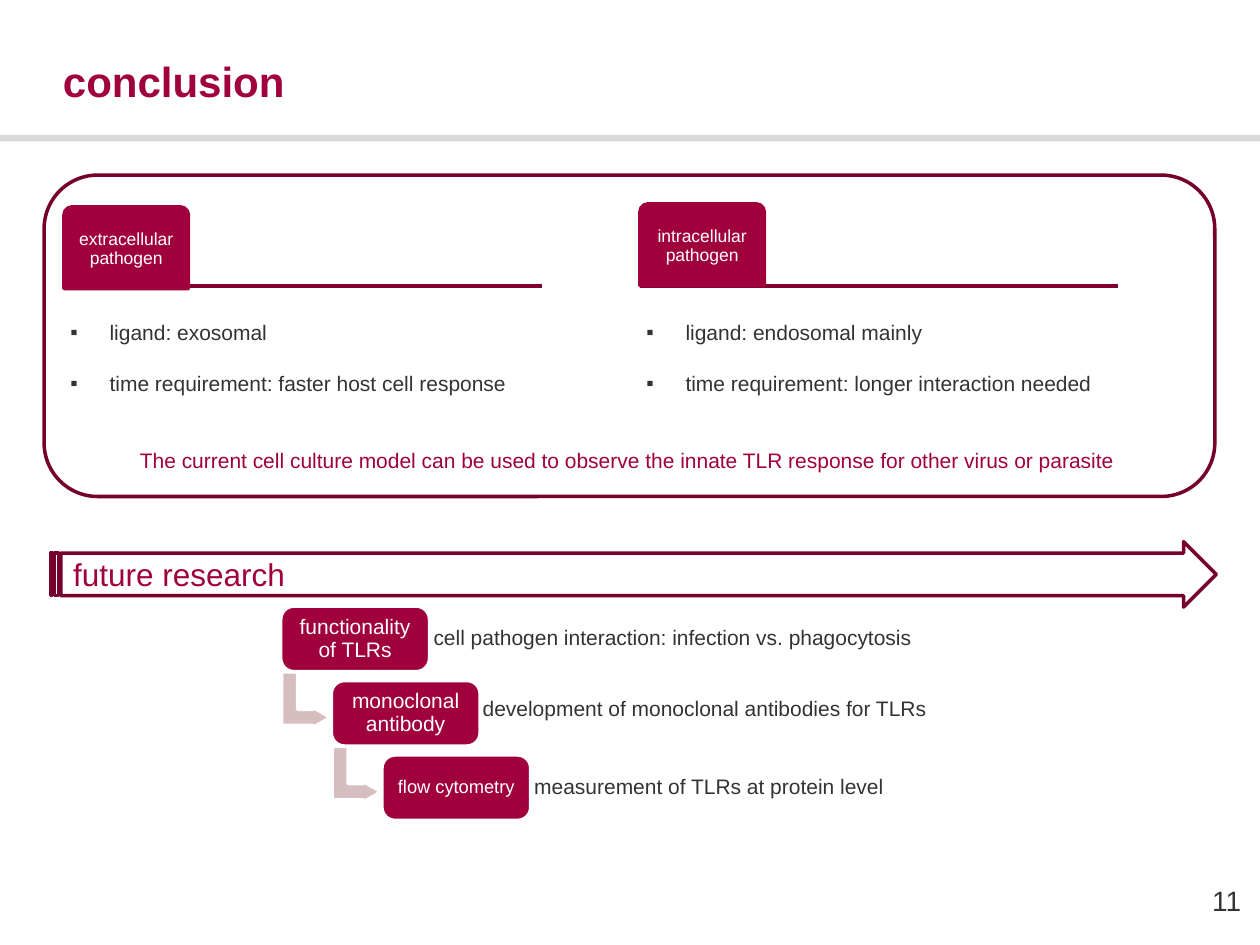
"""Build the conclusion slide: pathogen comparison and future research steps."""
from lxml import etree
from pptx import Presentation
from pptx.dml.color import RGBColor
from pptx.enum import shapes, text
from pptx.oxml import ns
from pptx.util import Cm, Pt

COLORS = {"red": "A0003C", "dark": "76002C", "line": "800030", "pink": "D6BDC0",
          "rule": "DADADA", "ink": "333333", "white": "FFFFFF"}
COLUMNS = [
    (1.29, 4.17, "extracellular pathogen",
     ["ligand: exosomal", "time requirement: faster host cell response"]),
    (12.9, 4.11, "intracellular pathogen",
     ["ligand: endosomal mainly", "time requirement: longer interaction needed"]),
]
STEPS = [
    ("functionality of TLRs", 12, "cell pathogen interaction: infection vs. phagocytosis",
     (8.66, 12.34, 10.24, 1.07)),
    ("monoclonal antibody", 12, "development of monoclonal antibodies for TLRs",
     (9.65, 13.77, 10.08, 1.07)),
    ("flow cytometry", 10.5, "measurement of TLRs at protein level",
     (10.69, 15.34, 8, 1.07)),
]
SUMMARY = ("The current cell culture model can be used to observe the innate TLR "
           "response for other virus or parasite")
STEP_X, STEP_Y, STEP_DX, STEP_DY = 5.66, 12.22, 1.02, 1.5
COLUMN_W, BASELINE_Y = 9.63, 5.77

MSO = shapes.MSO_SHAPE
LEFT, CENTER, RIGHT = text.PP_ALIGN.LEFT, text.PP_ALIGN.CENTER, text.PP_ALIGN.RIGHT
TOP, MIDDLE = text.MSO_ANCHOR.TOP, text.MSO_ANCHOR.MIDDLE


def rgb(name):
    return RGBColor.from_string(COLORS[name])


def write(sp, lines, size, color, align=LEFT, anchor=MIDDLE, inset=(0.25, 0.13),
          spacing=None, bold=False, wrap=True):
    tf = sp.text_frame
    tf.text = "\n".join(lines)
    tf.word_wrap = wrap
    tf.vertical_anchor = anchor
    tf.margin_left = tf.margin_right = Cm(inset[0])
    tf.margin_top = tf.margin_bottom = Cm(inset[1])
    for p in tf.paragraphs:
        p.alignment = align
        p.line_spacing = spacing
        for r in p.runs:
            r.font.name, r.font.size, r.font.bold = "Arial", Pt(size), bold
            r.font.color.rgb = rgb(color)
    return tf


def add_text(s, box, lines, size, color, **style):
    return write(s.shapes.add_textbox(*map(Cm, box)), lines, size, color, **style)


def add_shape(s, kind, box, fill=None, line=None, adj=()):
    sp = s.shapes.add_shape(kind, *map(Cm, box))
    sp.shadow.inherit = False
    for i, value in enumerate(adj):
        sp.adjustments[i] = value
    if fill:
        sp.fill.solid()
        sp.fill.fore_color.rgb = rgb(fill)
    else:
        sp.fill.background()
    if line:
        sp.line.color.rgb = rgb(line)
        sp.line.width = Pt(2)
    else:
        sp.line.fill.background()
    return sp


def add_line(s, x, y, width):
    cx = s.shapes.add_connector(shapes.MSO_CONNECTOR.STRAIGHT,
                                Cm(x), Cm(y), Cm(x + width), Cm(y))
    cx.line.color.rgb = rgb("line")
    cx.line.width = Pt(2)
    etree.SubElement(cx._element.spPr, ns.qn("a:effectLst"))


def add_bullets(tf):
    for i, p in enumerate(tf.paragraphs):
        pPr = p._p.get_or_add_pPr()
        pPr.set("marL", str(Cm(0.79)))
        pPr.set("indent", str(-Cm(0.79)))
        if i:
            p.space_before = Pt(14.5)
        etree.SubElement(pPr, ns.qn("a:buFont"), typeface="Arial")
        etree.SubElement(pPr, ns.qn("a:buChar"), char="▪")


def add_column(s, x, tab_y, label, lines):
    add_line(s, x, BASELINE_Y, COLUMN_W)
    tab = add_shape(s, MSO.ROUND_2_SAME_RECTANGLE, (x, tab_y, 2.51, 1.65),
                    "red", "red", (0.1, 0))
    write(tab, [label], 10, "white", align=CENTER, inset=(0.08, 0.08), spacing=0.9)
    add_bullets(add_text(s, (x, 6.32, COLUMN_W, 1.75), lines, 12, "ink",
                         anchor=TOP, inset=(0.13, 0.13)))


def add_step(s, i, label, size, note, note_box):
    x, y = STEP_X + i * STEP_DX, STEP_Y + i * STEP_DY
    if i < len(STEPS) - 1:
        bend = add_shape(s, MSO.BENT_UP_ARROW, (x - 0.05, y + 1.39, 1.12, 0.99),
                         "pink", "white", (0.328, 0.204, 0.358))
        bend.rotation = 90
    sp = add_shape(s, MSO.ROUNDED_RECTANGLE, (x, y, 3, 1.32), "red", "white", (0.2,))
    write(sp, [label], size, "white", align=CENTER, inset=(0.15, 0.15), spacing=0.9)
    add_text(s, note_box, [note], 12, "ink", inset=(0.08, 0.08), spacing=0.9)


def main():
    prs = Presentation()
    prs.slide_width, prs.slide_height = Cm(25.4), Cm(19.05)
    s = prs.slides.add_slide(prs.slide_layouts[6])
    add_shape(s, MSO.RECTANGLE, (0, 2.72, 25.4, 0.13), "rule")
    add_text(s, (23.47, 17.63, 1.55, 1.02), ["11"], 16, "ink", align=RIGHT, inset=(0, 0.13))
    banner = add_shape(s, MSO.STRIPED_RIGHT_ARROW, (1.02, 10.92, 23.5, 1.32),
                       line="dark", adj=(0.647, 0.5))
    write(banner, ["future research"], 18, "red")
    for i, step in enumerate(STEPS):
        add_step(s, i, *step)
    for column in COLUMNS:
        add_column(s, *column)
    add_shape(s, MSO.ROUNDED_RECTANGLE, (0.89, 3.53, 23.6, 6.48), line="dark")
    add_text(s, (1.02, 0.99, 5.03, 1.27), ["conclusion"], 24, "red",
             anchor=TOP, bold=True, wrap=False)
    add_text(s, (2.57, 8.89, 20.27, 0.76), [SUMMARY], 12, "red", anchor=TOP)
    prs.save("out.pptx")


if __name__ == "__main__":
    main()
